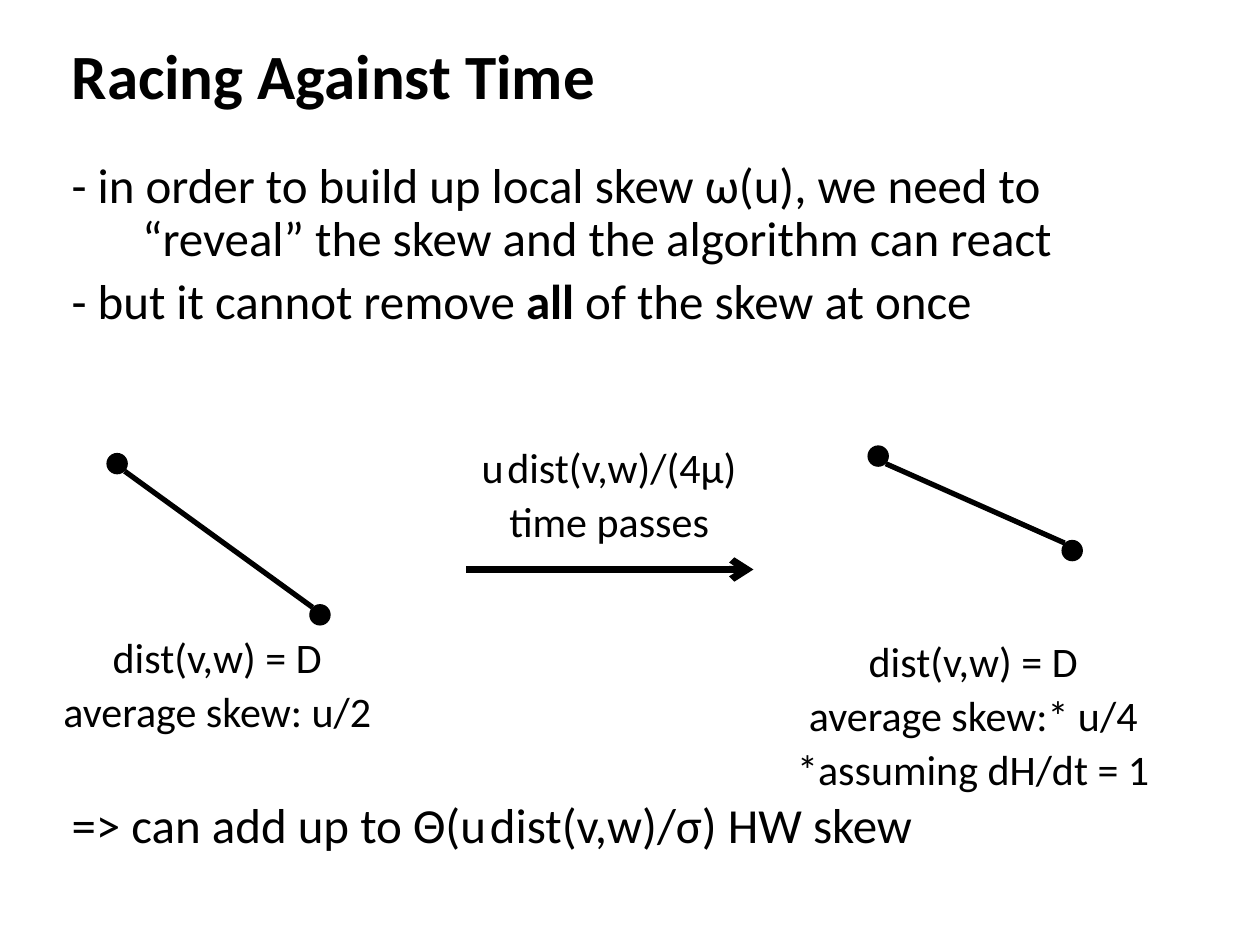
from pptx import Presentation
from pptx.dml.color import RGBColor
from pptx.enum.shapes import MSO_CONNECTOR as LINE, MSO_SHAPE as SHAPE
from pptx.enum.text import MSO_ANCHOR as ANCHOR, MSO_AUTO_SIZE as FIT, PP_ALIGN as ALIGN
from pptx.oxml.ns import qn
from pptx.util import Inches, Pt
from lxml import etree

FONT, BLACK = "Calibri", "000000"
HANG = 0.56
DOT = 0.16
EDGE = 0.02  # gap from a dot's bounding corner to its outline, per axis

# Paragraphs are lists of (text, size, bold) spans
TITLE = [[("Racing Against Time", 36, True)]]
POINTS = [
    [("- in order to build up local skew ω(u), we need to “reveal” the skew "
      "and the algorithm can react", 28, False)],
    [("- but it cannot remove ", 28, False), ("all", 28, True),
     (" of the skew at once", 28, False)],
]
CONCLUSION = [[("=> can add up to Θ(u", 28, False), (" ", 10, False),
               ("dist(v,w)/σ) HW skew", 28, False)]]
BEFORE = [[("dist(v,w) = D", 24, False)], [("average skew: u/2", 24, False)]]
AFTER = [[("dist(v,w) = D", 24, False)], [("average skew:* u/4", 24, False)],
         [("*assuming dH/dt = 1", 24, False)]]
ELAPSED = [[("u", 24, False), (" ", 9, False), ("dist(v,w)/(4μ)", 24, False)],
           [("time passes", 24, False)]]

# left, top, width, height, paragraphs
BODY_BOXES = [(0.47, 1.23, 8.94, 1.5, POINTS), (0.47, 6.31, 8.94, 0.55, CONCLUSION)]
LABELS = [(0.06, 5.01, 3.33, 0.91, BEFORE), (6.06, 5.04, 3.33, 1.35, AFTER),
          (3.17, 3.5, 3.33, 0.91, ELAPSED)]
# top-left corners of the two dots of each skew line
SKEW_LINES = [((6.89, 3.54), (8.43, 4.29)), ((0.85, 3.6), (2.46, 4.8))]
TIME_ARROW = ((3.7, 4.52), (5.98, 4.52))


def color(value):
    return RGBColor.from_string(value)


def add_text(page, left, top, width, height, paragraphs, align=ALIGN.LEFT, hang=HANG):
    box = page.shapes.add_textbox(Inches(left), Inches(top), Inches(width), Inches(height))
    frame = box.text_frame
    frame.word_wrap = True
    for number, spans in enumerate(paragraphs):
        para = frame.add_paragraph() if number else frame.paragraphs[0]
        para.alignment = align
        para.line_spacing = 0.9
        if number:
            para.space_before = Pt(0.2 * spans[0][1])
        if hang:
            properties = para._p.get_or_add_pPr()
            properties.set("marL", str(Inches(hang)))
            properties.set("indent", str(-Inches(hang)))
        for text, size, bold in spans:
            span = para.add_run()
            span.text = text
            span.font.name, span.font.size, span.font.bold = FONT, Pt(size), bold
            span.font.color.rgb = color(BLACK)
    return box


def add_line(page, start, end, weight, arrow=False):
    line = page.shapes.add_connector(LINE.STRAIGHT, *map(Inches, (*start, *end)))
    line.line.color.rgb = color(BLACK)
    line.line.width = Pt(weight)
    if arrow:
        etree.SubElement(line.line._get_or_add_ln(), qn("a:tailEnd"), type="arrow")
    etree.SubElement(line._element.spPr, qn("a:effectLst"))


def add_dot(page, left, top):
    dot = page.shapes.add_shape(SHAPE.OVAL, *map(Inches, (left, top, DOT, DOT)))
    dot.shadow.inherit = False
    dot.fill.solid()
    dot.fill.fore_color.rgb = color(BLACK)
    dot.line.color.rgb = color(BLACK)
    dot.line.width = Pt(0.75)


def main():
    deck = Presentation()
    deck.slide_width, deck.slide_height = Inches(10), Inches(7.5)
    page = deck.slides.add_slide(deck.slide_layouts[6])

    # Title and body text
    title = add_text(page, 0.47, 0.25, 9.19, 0.75, TITLE, hang=0)
    title.text_frame.vertical_anchor = ANCHOR.MIDDLE
    for box in BODY_BOXES:
        add_text(page, *box)

    # Skew lines run from the lower right of one dot to the upper left of the next
    for first, second in SKEW_LINES:
        start = [place + DOT - EDGE for place in first]
        end = [place + EDGE for place in second]
        add_line(page, start, end, 3)
        add_dot(page, *first)
        add_dot(page, *second)

    # Time arrow and labels
    add_line(page, *TIME_ARROW, 4, arrow=True)
    for label in LABELS:
        box = add_text(page, *label, align=ALIGN.CENTER)
        box.text_frame.auto_size = FIT.SHAPE_TO_FIT_TEXT

    deck.save("out.pptx")


if __name__ == "__main__":
    main()
